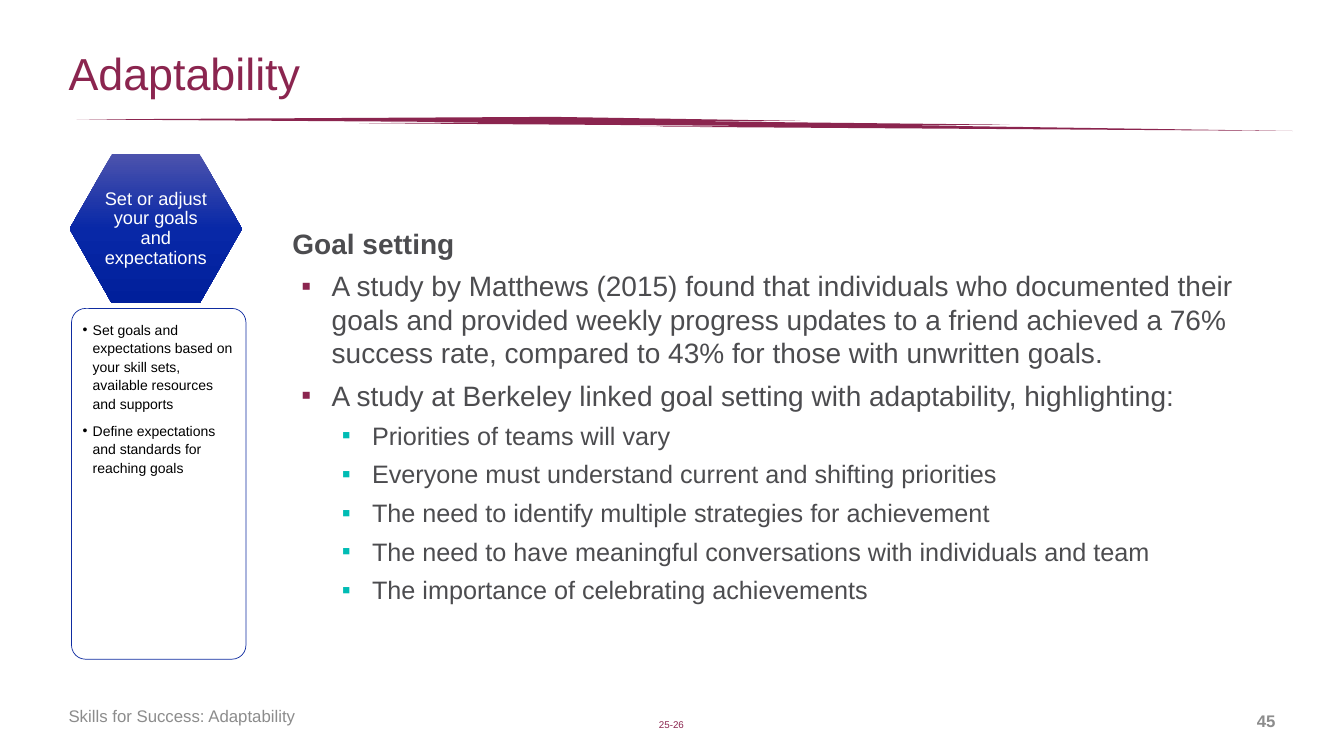
from copy import deepcopy

from lxml import etree
from pptx import Presentation
from pptx.dml.color import RGBColor
from pptx.enum.shapes import MSO_SHAPE
from pptx.enum.text import MSO_ANCHOR, MSO_AUTO_SIZE, PP_ALIGN
from pptx.oxml.ns import qn
from pptx.util import Inches, Pt

BOLT, PANEL, DIAMOND = MSO_SHAPE.LIGHTNING_BOLT, MSO_SHAPE.ROUNDED_RECTANGLE, MSO_SHAPE.DIAMOND
TOP, MIDDLE, BOTTOM = MSO_ANCHOR.TOP, MSO_ANCHOR.MIDDLE, MSO_ANCHOR.BOTTOM
LEFT, CENTER, RIGHT = PP_ALIGN.LEFT, PP_ALIGN.CENTER, PP_ALIGN.RIGHT
NO_AUTOFIT = MSO_AUTO_SIZE.NONE

FONT = "Arial"
MAROON = RGBColor(0x8B, 0x25, 0x4F)
TEAL = RGBColor(0x00, 0xBC, 0xB4)
CHARCOAL = RGBColor(0x4C, 0x4C, 0x4F)
GRAY = RGBColor(0x8C, 0x8C, 0x8C)
NAVY = RGBColor(0x0F, 0x2C, 0xA0)
BLACK = RGBColor(0, 0, 0)
WHITE = RGBColor(0xFF, 0xFF, 0xFF)
HEXAGON_STOPS = [
    (0, RGBColor(0x4C, 0x53, 0xAD)),
    (0.5, RGBColor(0x08, 0x28, 0xA7)),
    (1, RGBColor(0x00, 0x1F, 0x9B)),
]

STUDIES = [
    (0, "Goal setting"),
    (1, "A study by Matthews (2015) found that individuals who documented their goals and "
        "provided weekly progress updates to a friend achieved a 76% success rate, "
        "compared to 43% for those with unwritten goals."),
    (1, "A study at Berkeley linked goal setting with adaptability, highlighting:"),
    (2, "Priorities of teams will vary"),
    (2, "Everyone must understand current and shifting priorities"),
    (2, "The need to identify multiple strategies for achievement"),
    (2, "The need to have meaningful conversations with individuals and team"),
    (2, "The importance of celebrating achievements"),
]
GOAL_STEPS = [
    "Set goals and expectations based on your skill sets, available resources and supports",
    "Define expectations and standards for reaching goals",
]


def place(shape, left, top, width, height):
    """Move and size a shape, in inches."""
    shape.left, shape.top = Inches(left), Inches(top)
    shape.width, shape.height = Inches(width), Inches(height)


def set_frame(frame, anchor, side=0, end=0):
    """Set wrapping, anchor and margins of a text frame."""
    frame.word_wrap = True
    frame.auto_size = NO_AUTOFIT
    frame.vertical_anchor = anchor
    frame.margin_left = frame.margin_right = Inches(side)
    frame.margin_top = frame.margin_bottom = Inches(end)


def style(paragraph, size, color, bold=False, align=LEFT, spacing=1.0):
    """Format a paragraph and its runs."""
    paragraph.alignment = align
    paragraph.line_spacing = spacing
    for run in paragraph.runs:
        font = run.font
        font.name, font.size, font.bold = FONT, Pt(size), bold
        font.color.rgb = color


def set_bullet(paragraph, char, color, margin, hanging):
    """Give a paragraph a hanging bullet, or none if char is empty."""
    props = paragraph._p.get_or_add_pPr()
    props.set("marL", str(Inches(margin)))
    props.set("indent", str(-Inches(hanging)))
    if not char:
        etree.SubElement(props, qn("a:buNone"))
        return
    bullet_color = etree.SubElement(props, qn("a:buClr"))
    etree.SubElement(bullet_color, qn("a:srgbClr"), val=str(color))
    etree.SubElement(props, qn("a:buFont"), typeface=FONT)
    etree.SubElement(props, qn("a:buChar"), char=char)


def space_list(paragraphs):
    """Put equal space around list paragraphs, with none before the first."""
    for index, paragraph in enumerate(paragraphs):
        paragraph.space_before = Pt(3 if index else 0)
        paragraph.space_after = Pt(3)


def add_plain_shape(slide, kind, box, color):
    """Add a filled preset shape without line or shadow."""
    shape = slide.shapes.add_shape(kind, *map(Inches, box))
    shape.shadow.inherit = False
    shape.fill.solid()
    shape.fill.fore_color.rgb = color
    shape.line.fill.background()
    return shape


def add_label(slide, text, box, align, bold=False):
    """Add a grey footer text."""
    label = slide.shapes.add_textbox(*map(Inches, box))
    set_frame(label.text_frame, MIDDLE, end=0.05)
    label.text_frame.text = text
    style(label.text_frame.paragraphs[0], 12, GRAY, bold, align)


def fill_title(title):
    """Write the slide title."""
    place(title, 0.68, 0.4, 11.97, 0.71)
    set_frame(title.text_frame, MIDDLE)
    title.text_frame.text = "Adaptability"
    style(title.text_frame.paragraphs[0], 32, MAROON, spacing=0.9)


def fill_studies(body):
    """Write the heading and the two levels of study findings."""
    place(body, 2.9, 1.5, 9.75, 5.25)
    frame = body.text_frame
    set_frame(frame, MIDDLE)
    frame.text = "\n".join(text for _, text in STUDIES)
    looks = [("", None, 0, 0, 20), ("▪", MAROON, 0.39, 0.3, 20), ("▪", TEAL, 0.79, 0.3, 18)]
    for paragraph, (level, _) in zip(frame.paragraphs, STUDIES):
        *bullet, size = looks[level]
        paragraph.level = level
        set_bullet(paragraph, *bullet)
        style(paragraph, size, CHARCOAL, bold=level == 0)
    space_list(frame.paragraphs)


def add_hexagon(slide):
    """Add the gradient hexagon that names the step."""
    corners = [(1.11, 1.53), (1.98, 1.53), (2.4, 2.27), (1.98, 3.01), (1.11, 3.01)]
    builder = slide.shapes.build_freeform(Inches(0.69), Inches(2.27))
    builder.add_line_segments([(Inches(x), Inches(y)) for x, y in corners])
    hexagon = builder.convert_to_shape()
    hexagon.shadow.inherit = False
    hexagon.line.fill.background()
    hexagon.fill.gradient()
    hexagon.fill.gradient_angle = 270
    stop_list = hexagon._element.spPr.find(qn("a:gradFill")).find(qn("a:gsLst"))
    stop_list.append(deepcopy(stop_list[0]))
    for stop, (position, color) in zip(hexagon.fill.gradient_stops, HEXAGON_STOPS):
        stop.position = position
        stop.color.rgb = color
    set_frame(hexagon.text_frame, MIDDLE, 0.3, 0.26)
    hexagon.text_frame.text = "Set or adjust your goals and expectations"
    style(hexagon.text_frame.paragraphs[0], 13, WHITE, align=CENTER, spacing=0.9)


def add_steps_panel(slide):
    """Add the rounded panel with the goal steps."""
    panel = add_plain_shape(slide, PANEL, (0.71, 3.06, 1.73, 3.48), WHITE)
    panel.adjustments[0] = 0.08
    color = panel._element.spPr.find(qn("a:solidFill"))[0]
    etree.SubElement(color, qn("a:alpha"), val="90000")
    panel.line.color.rgb = NAVY
    panel.line.width = Pt(0.5)
    frame = panel.text_frame
    set_frame(frame, TOP, 0.07, 0.07)
    frame.text = "\n".join(GOAL_STEPS)
    for paragraph in frame.paragraphs:
        set_bullet(paragraph, "•", BLACK, 0.1, 0.1)
        style(paragraph, 10, BLACK, spacing=1.1)
    space_list(frame.paragraphs)


def add_year_mark(slide):
    """Add the diamond with the year range."""
    diamond = add_plain_shape(slide, DIAMOND, (6.38, 7.03, 0.56, 0.35), WHITE)
    set_frame(diamond.text_frame, BOTTOM, end=0.05)
    diamond.text_frame.text = "25-26"
    style(diamond.text_frame.paragraphs[0], 7, MAROON, align=CENTER)


def main():
    """Build and save the slide."""
    deck = Presentation()
    deck.slide_width, deck.slide_height = Inches(13.33), Inches(7.5)
    slide = deck.slides.add_slide(deck.slide_layouts[1])
    add_plain_shape(slide, BOLT, (0.76, 1.16, 12.06, 0.14), MAROON)
    fill_title(slide.shapes.title)
    fill_studies(slide.placeholders[1])
    add_label(slide, "Skills for Success: Adaptability", (0.68, 6.9, 4.55, 0.4), LEFT)
    add_label(slide, "45", (11.26, 6.95, 1.39, 0.4), RIGHT, bold=True)
    add_hexagon(slide)
    add_steps_panel(slide)
    add_year_mark(slide)
    deck.save("out.pptx")


if __name__ == "__main__":
    main()
